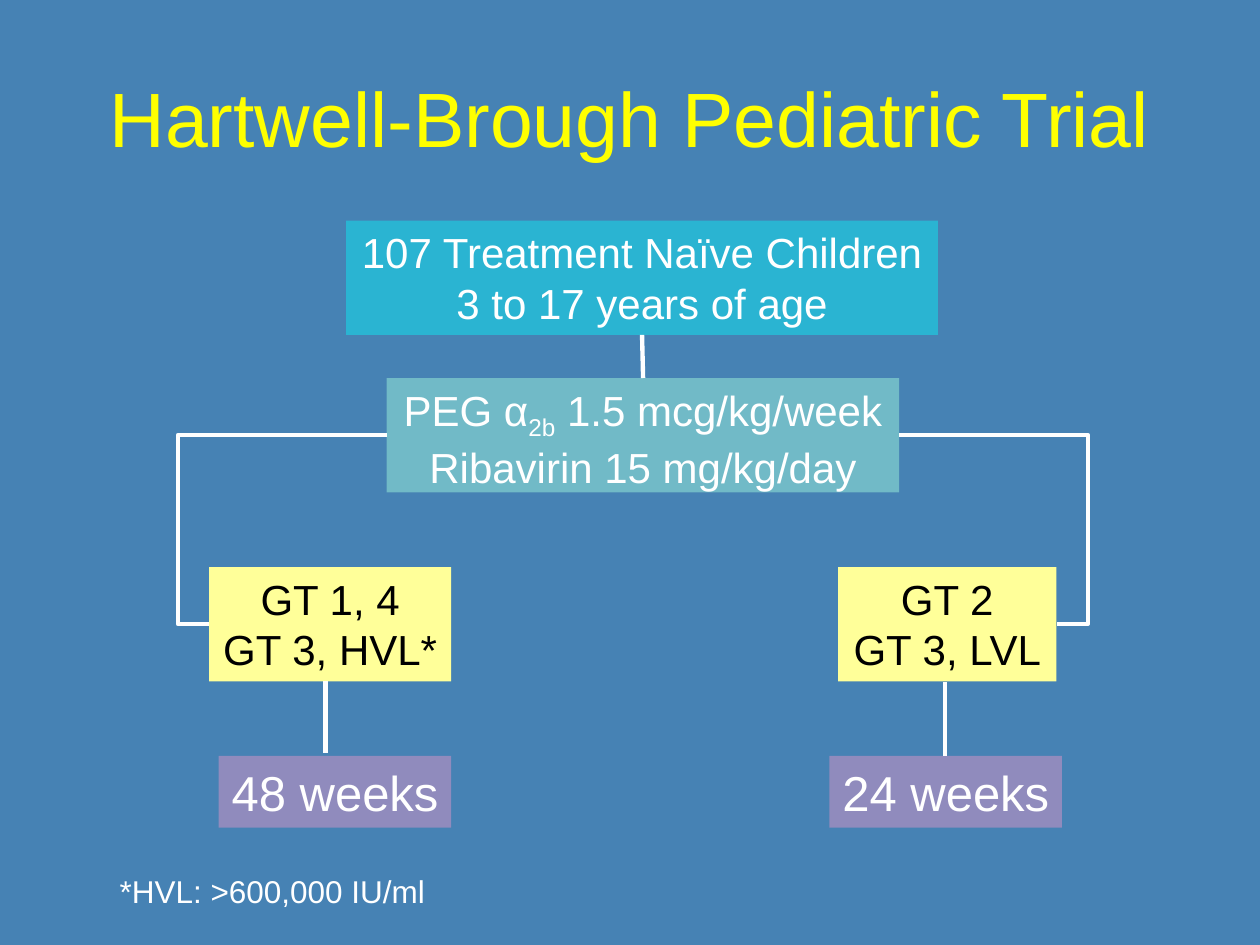
from dataclasses import dataclass

from lxml import etree
from pptx import Presentation
from pptx.dml.color import RGBColor
from pptx.enum.shapes import MSO_CONNECTOR, MSO_SHAPE
from pptx.enum.text import MSO_ANCHOR, MSO_AUTO_SIZE, PP_ALIGN
from pptx.oxml.ns import qn
from pptx.util import Pt

RECTANGLE = MSO_SHAPE.RECTANGLE
STRAIGHT, ELBOW = MSO_CONNECTOR.STRAIGHT, MSO_CONNECTOR.ELBOW
TOP, MIDDLE = MSO_ANCHOR.TOP, MSO_ANCHOR.MIDDLE
GROW, FIXED = MSO_AUTO_SIZE.SHAPE_TO_FIT_TEXT, MSO_AUTO_SIZE.NONE
CENTER = PP_ALIGN.CENTER


@dataclass(frozen=True)
class Theme:
    """Colours, font, type sizes and line width of the deck."""
    font: str = "Arial"
    background: str = "4682B4"
    title: str = "FFFF00"
    light: str = "FFFFFF"
    dark: str = "000000"
    cohort: str = "00FFFF"
    regimen: str = "7ECBCD"
    genotype: str = "FFFF99"
    duration: str = "FF99CC"
    title_size: int = 44
    duration_size: int = 28
    body_size: int = 24
    note_size: int = 18
    line_width: float = 2.5


THEME = Theme()


def write_text(shape, lines, size=THEME.body_size, color=THEME.light,
               wrap=False, anchor=TOP, fit=GROW):
    """Fill a shape with centred lines; a (text, offset) pair shifts the baseline."""
    frame = shape.text_frame
    frame.word_wrap, frame.vertical_anchor, frame.auto_size = wrap, anchor, fit
    for index, line in enumerate(lines):
        para = frame.add_paragraph() if index else frame.paragraphs[0]
        para.alignment = CENTER
        for text, offset in [(line, 0)] if isinstance(line, str) else line:
            span = para.add_run()
            span.text = text
            span.font.name, span.font.size = THEME.font, Pt(size)
            span.font.color.rgb = RGBColor.from_string(color)
            if offset:
                span.font._element.set("baseline", str(offset * 1000))


def add_label(page, box, lines, **style):
    """Place free text in the given box."""
    write_text(page.shapes.add_textbox(*map(Pt, box)), lines, **style)


def add_node(page, box, lines, fill, opacity=100, **style):
    """Place a filled rectangle of the flow chart in the given box."""
    node = page.shapes.add_shape(RECTANGLE, *map(Pt, box))
    node.shadow.inherit = False
    node.line.fill.background()
    node.fill.solid()
    node.fill.fore_color.rgb = RGBColor.from_string(fill)
    if opacity < 100:
        tint = next(node._element.spPr.iter(qn("a:srgbClr")))
        etree.SubElement(tint, qn("a:alpha"), val=str(opacity * 1000))
    write_text(node, lines, **style)


def add_link(page, start, end, bend_x=None):
    """Join two points by a line, or by an elbow that turns at bend_x."""
    kind = STRAIGHT if bend_x is None else ELBOW
    link = page.shapes.add_connector(kind, *map(Pt, (*start, *end)))
    link.line.color.rgb = RGBColor.from_string(THEME.light)
    link.line.width = Pt(THEME.line_width)
    properties = link._element.spPr
    etree.SubElement(properties, qn("a:effectLst"))
    if bend_x is not None:
        ratio = round((bend_x - start[0]) / (end[0] - start[0]) * 100000)
        guides = next(properties.iter(qn("a:avLst")))
        etree.SubElement(guides, qn("a:gd"), name="adj1", fmla=f"val {ratio}")


def add_enrolment(page, cohort_box, regimen_box):
    """Place the cohort above the regimen and join them."""
    add_node(page, cohort_box,
             ["107 Treatment Naïve Children", "3 to 17 years of age"],
             THEME.cohort, opacity=40)
    regimen = [("PEG α", 0), ("2b", -25), (" 1.5 mcg/kg/week", 0)]
    add_node(page, regimen_box, [regimen, "Ribavirin 15 mg/kg/day"],
             THEME.regimen, opacity=77)
    left, top, width, height = cohort_box
    middle = left + width / 2
    add_link(page, (middle, top + height), (middle + 0.6, regimen_box[1]))


def add_arm(page, genotype_box, duration_box, genotypes, duration,
            start, edge_x, bend_x, stem):
    """Place one treatment arm and its links."""
    add_node(page, genotype_box, genotypes, THEME.genotype, color=THEME.dark)
    add_node(page, duration_box, [duration], THEME.duration, opacity=40,
             size=THEME.duration_size)
    add_link(page, start, (edge_x, 356.6), bend_x)
    stem_x, stem_top, stem_bottom = stem
    add_link(page, (stem_x, stem_top), (stem_x, stem_bottom))


def build_trial(page):
    """Lay out the title, the trial flow chart and the footnote."""
    page.background.fill.solid()
    page.background.fill.fore_color.rgb = RGBColor.from_string(THEME.background)
    add_label(page, (36, 21.6, 648, 90), ["Hartwell-Brough Pediatric Trial"],
              size=THEME.title_size, color=THEME.title,
              wrap=True, anchor=MIDDLE, fit=FIXED)
    add_enrolment(page, (197.8, 126, 338.2, 65.4), (221, 216, 292.8, 65.4))
    add_arm(page, (119.5, 324, 138.4, 65.4), (125, 432, 132.9, 41),
            ["GT 1, 4", "GT 3, HVL*"], "48 weeks",
            start=(221, 248.6), edge_x=119.5, bend_x=101.6,
            stem=(186, 389, 430.4))
    add_arm(page, (478.9, 324, 124.8, 65.4), (474, 432, 132.9, 41),
            ["GT 2", "GT 3, LVL"], "24 weeks",
            start=(513.8, 248.6), edge_x=603.8, bend_x=621.6,
            stem=(540, 390, 432))
    add_label(page, (58.8, 494.6, 193.7, 28.8), ["*HVL: >600,000 IU/ml"],
              size=THEME.note_size)


def main():
    """Build and save the deck."""
    deck = Presentation()
    deck.slide_width, deck.slide_height = Pt(720), Pt(540)
    build_trial(deck.slides.add_slide(deck.slide_layouts[6]))
    deck.save("out.pptx")


if __name__ == "__main__":
    main()
